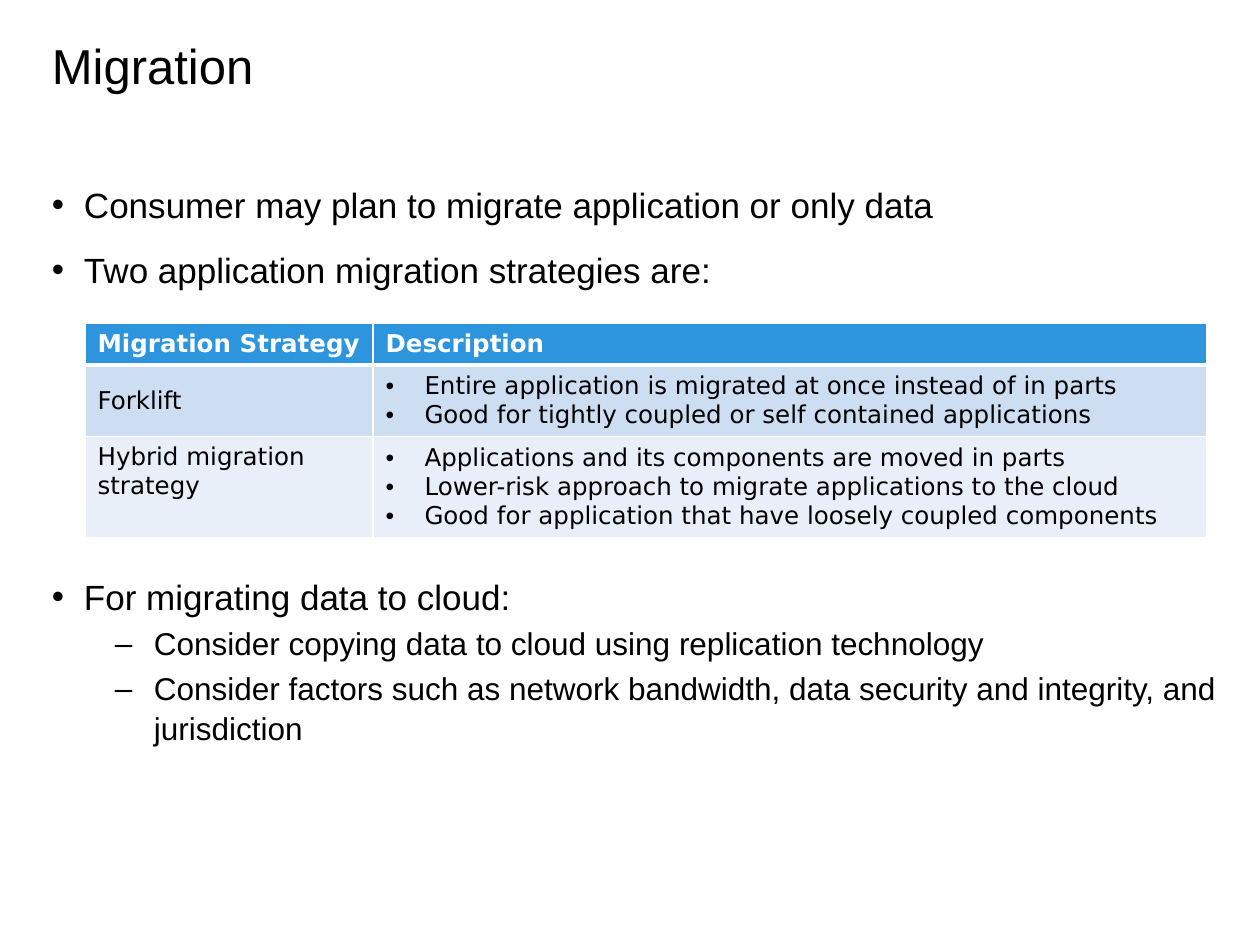
from pptx import Presentation
from pptx.dml.color import RGBColor
from pptx.enum.text import MSO_ANCHOR as Anchor
from pptx.oxml.ns import qn
from pptx.util import Pt
from lxml.etree import SubElement

PX = 914400 / 126
COLORS = {"text": "000000", "white": "FFFFFF", "header": "2C95DD",
          "band_dark": "CDDDF2", "band_light": "E8EFF9"}
BODY_LEVELS = {
    0: {"bullet": "•", "left": 32, "hang": 32, "size": 20, "before": 12},
    1: {"bullet": "–", "left": 102, "hang": 39, "size": 18, "before": 3},
}


def px(length):
    return round(length * PX)


def style(para, font, size, color="text", bullet=None, left=0, hang=0):
    """Set the font, and a hanging bullet if one is given."""
    if bullet:
        props = para._p.get_or_add_pPr()
        props.set("marL", str(px(left)))
        props.set("indent", str(-px(hang)))
        SubElement(props, qn("a:buFont"), typeface="Arial")
        SubElement(props, qn("a:buChar"), char=bullet)
    para.font.name = font
    para.font.size = Pt(size)
    para.font.color.rgb = RGBColor.from_string(COLORS[color])


deck = Presentation()
deck.slide_width, deck.slide_height = px(1260), px(945)
page = deck.slides.add_slide(deck.slide_layouts[6])

# Title and body text: top, height, line spacing, (level, text) lines
text_blocks = [
    (42, 84, 0.9, [(None, "Migration")]),
    (181, 120, 1.05, [
        (0, "Consumer may plan to migrate application or only data"),
        (0, "Two application migration strategies are:"),
    ]),
    (573, 180, 1.05, [
        (0, "For migrating data to cloud:"),
        (1, "Consider copying data to cloud using replication technology"),
        (1, "Consider factors such as network bandwidth, data security "
            "and integrity, and jurisdiction"),
    ]),
]
for top, height, spacing, lines in text_blocks:
    box = page.shapes.add_textbox(px(52), px(top), px(1166), px(height))
    frame = box.text_frame
    frame.word_wrap = True
    frame.margin_left = frame.margin_right = 0
    frame.margin_top = frame.margin_bottom = 0
    for index, (level, text) in enumerate(lines):
        para = frame.add_paragraph() if index else frame.paragraphs[0]
        para.text = text
        para.line_spacing = spacing
        if level is None:
            style(para, "Arial", 28)
            continue
        look = BODY_LEVELS[level]
        para.level = level
        if index:
            para.space_before = Pt(look["before"])
        style(para, "Arial", look["size"], bullet=look["bullet"],
              left=look["left"], hang=look["hang"])

# Strategy table: height, fill, label anchor, label, description lines
rows = [
    (41, "header", Anchor.MIDDLE, "Migration Strategy", ["Description"]),
    (70, "band_dark", Anchor.MIDDLE, "Forklift", [
        "Entire application is migrated at once instead of in parts",
        "Good for tightly coupled or self contained applications",
    ]),
    (98, "band_light", Anchor.TOP, "Hybrid migration strategy", [
        "Applications and its components are moved in parts",
        "Lower-risk approach to migrate applications to the cloud",
        "Good for application that have loosely coupled components",
    ]),
]
column_widths = [288, 834]
table = page.shapes.add_table(
    len(rows), len(column_widths), px(85), px(323),
    px(sum(column_widths)), px(sum(row[0] for row in rows))).table
for column, width in zip(table.columns, column_widths):
    column.width = px(width)

for row_index, (height, fill, anchor, label, description) in enumerate(rows):
    table.rows[row_index].height = px(height)
    is_header = row_index == 0
    for column_index, lines in enumerate([[label], description]):
        cell = table.cell(row_index, column_index)
        cell.vertical_anchor = Anchor.MIDDLE if column_index else anchor
        cell_props = cell._tc.get_or_add_tcPr()
        border_widths = {"L": 1, "R": 1, "T": 3 if row_index == 1 else 1,
                         "B": 3 if is_header else 1}
        for side, width in border_widths.items():
            border = SubElement(cell_props, qn(f"a:ln{side}"), w=str(Pt(width)))
            paint = SubElement(border, qn("a:solidFill"))
            SubElement(paint, qn("a:srgbClr"), val=COLORS["white"])
        cell.fill.solid()
        cell.fill.fore_color.rgb = RGBColor.from_string(COLORS[fill])
        for index, text in enumerate(lines):
            frame = cell.text_frame
            para = frame.add_paragraph() if index else frame.paragraphs[0]
            para.text = text
            has_bullet = column_index == 1 and not is_header
            style(para, "DejaVu Sans", 14, "white" if is_header else "text",
                  "•" if has_bullet else None, 39, 39)
            para.font.bold = is_header

deck.save("out.pptx")
